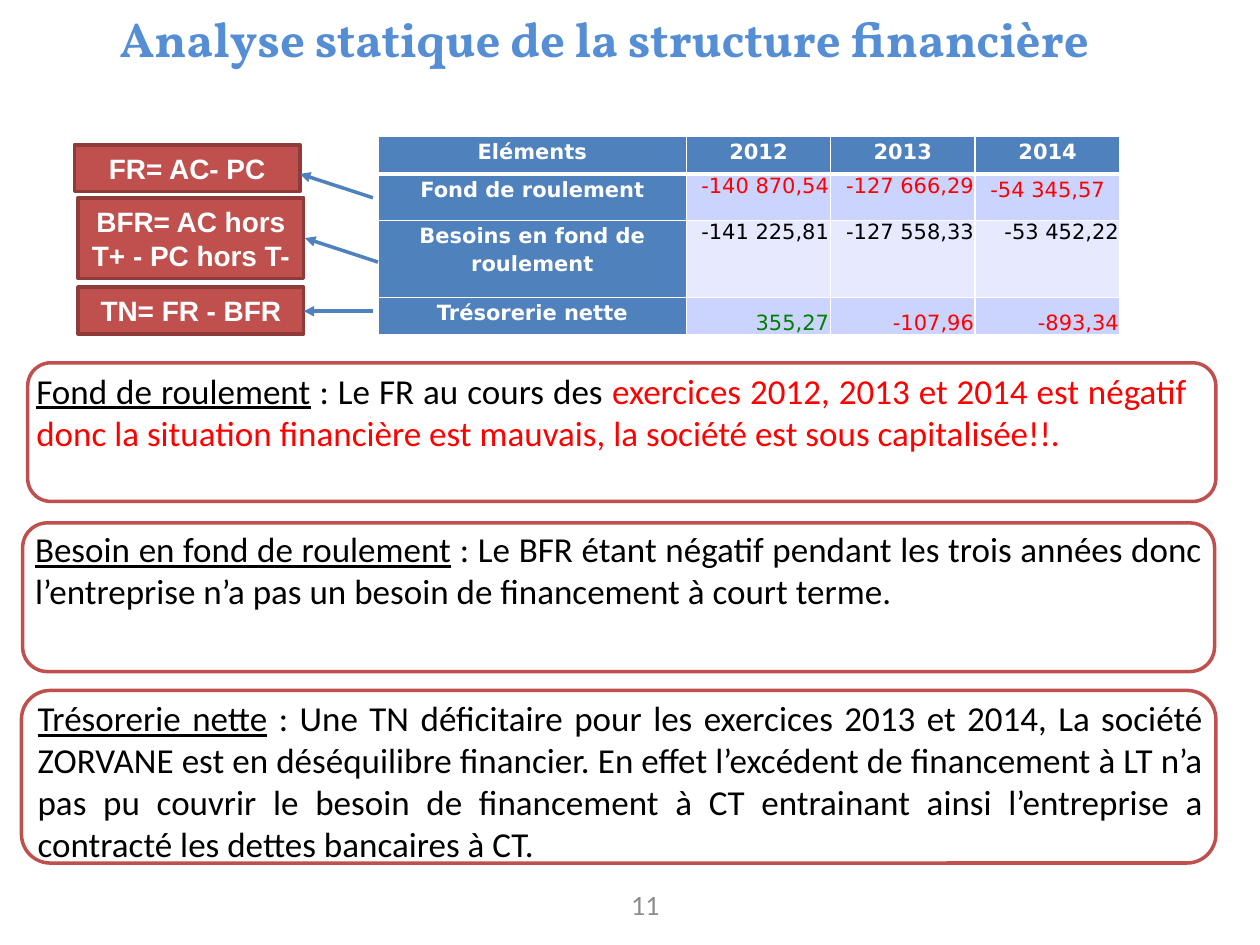
"""Builds the slide on the static analysis of the financial structure."""
from dataclasses import dataclass

from lxml import etree
from pptx import Presentation
from pptx.dml.color import RGBColor
from pptx.enum.shapes import MSO_CONNECTOR, MSO_SHAPE
from pptx.enum.text import MSO_ANCHOR, PP_ALIGN
from pptx.oxml.ns import qn
from pptx.util import Inches, Pt

RECT, ROUNDED = MSO_SHAPE.RECTANGLE, MSO_SHAPE.ROUNDED_RECTANGLE
STRAIGHT = MSO_CONNECTOR.STRAIGHT
TOP, MIDDLE, BOTTOM = MSO_ANCHOR.TOP, MSO_ANCHOR.MIDDLE, MSO_ANCHOR.BOTTOM
LEFT, CENTER, RIGHT, JUSTIFY = PP_ALIGN.LEFT, PP_ALIGN.CENTER, PP_ALIGN.RIGHT, PP_ALIGN.JUSTIFY


@dataclass(frozen=True)
class Theme:
    blue: str = "4F81BD"
    title_blue: str = "558ED5"
    red: str = "C0504D"
    dark_red: str = "8E3B39"
    alert: str = "FF0000"
    gain: str = "008000"
    band: str = "CBD3FF"
    light_band: str = "E7EAFF"
    grey: str = "8C8C8C"
    black: str = "000000"
    white: str = "FFFFFF"
    title_font: str = "Vollkorn"
    formula_font: str = "Arial"
    table_font: str = "DejaVu Sans"
    body_font: str = "Calibri"
    title_size: int = 28
    body_size: int = 20
    formula_size: int = 16
    table_size: int = 12


THEME = Theme()
Box = tuple[float, float, float, float]


@dataclass(frozen=True)
class Formula:
    text: str
    box: Box
    arrow_start: tuple[float, float]
    arrow_end: tuple[float, float]


@dataclass(frozen=True)
class Comment:
    term: str
    text: str
    frame: Box
    text_box: Box
    warning: str = ""


@dataclass(frozen=True)
class Row:
    label: str
    values: tuple[str, str, str]
    height: float
    fill: str
    colors: tuple[str, str, str]
    anchor: MSO_ANCHOR = TOP


FORMULAS = (
    Formula("FR= AC- PC", (0.59, 1.15, 1.79, 0.37), (2.96, 1.57), (2.38, 1.38)),
    Formula("BFR= AC hors T+ - PC hors T-", (0.62, 1.57, 1.79, 0.64), (3, 2.08), (2.42, 1.89)),
    Formula("TN= FR - BFR", (0.62, 2.28, 1.79, 0.37), (2.96, 2.47), (2.41, 2.47)),
)
COMMENTS = (
    Comment("Fond de roulement", " : Le FR au cours des ",
            (0.22, 2.88, 9.43, 1.1), (0.19, 2.88, 9.33, 0.99),
            "exercices 2012, 2013 et 2014 est négatif donc la situation financière est mauvais, "
            "la société est sous capitalisée!!."),
    Comment("Besoin en fond de roulement",
            " : Le BFR étant négatif pendant les trois années donc l’entreprise n’a pas un besoin "
            "de financement à court terme.",
            (0.18, 4.15, 9.46, 1.18), (0.18, 4.14, 9.46, 0.99)),
    Comment("Trésorerie nette",
            " : Une TN déficitaire pour les exercices 2013 et 2014, La société ZORVANE est en "
            "déséquilibre financier. En effet l’excédent de financement à LT n’a pas pu couvrir le "
            "besoin de financement à CT entrainant ainsi l’entreprise a contracté les dettes "
            "bancaires à CT.",
            (0.17, 5.48, 9.48, 1.37), (0.2, 5.48, 9.45, 0.99)),
)
HEADINGS = ("Eléments", "2012", "2013", "2014")
COLUMN_WIDTHS = (2.45, 1.14, 1.15, 1.15)
HEADER_HEIGHT = 0.3
ROWS = (
    Row("Fond de roulement", ("-140 870,54", "-127 666,29", "-54 345,57"), 0.37,
        THEME.band, (THEME.alert,) * 3),
    Row("Besoins en fond de roulement", ("-141 225,81", "-127 558,33", "-53 452,22"), 0.61,
        THEME.light_band, (THEME.black,) * 3),
    Row("Trésorerie nette", ("355,27", "-107,96", "-893,34"), 0.3,
        THEME.band, (THEME.gain, THEME.alert, THEME.alert), BOTTOM),
)


def add_run(paragraph, text: str, color: str, **formats) -> None:
    run = paragraph.add_run()
    run.text = text
    for attribute, value in formats.items():
        setattr(run.font, attribute, value)
    run.font.color.rgb = RGBColor.from_string(color)


def add_text_box(slide, box: Box, align: PP_ALIGN, anchor: MSO_ANCHOR = TOP):
    frame = slide.shapes.add_textbox(*map(Inches, box)).text_frame
    frame.word_wrap = True
    frame.vertical_anchor = anchor
    frame.paragraphs[0].alignment = align
    return frame


def add_panel(slide, kind: MSO_SHAPE, box: Box, fill: str, line: str):
    panel = slide.shapes.add_shape(kind, *map(Inches, box))
    panel.shadow.inherit = False
    panel.fill.solid()
    panel.fill.fore_color.rgb = RGBColor.from_string(fill)
    panel.line.color.rgb = RGBColor.from_string(line)
    panel.line.width = Pt(2)
    return panel


def add_formula(slide, formula: Formula) -> None:
    frame = add_panel(slide, RECT, formula.box, THEME.red, THEME.dark_red).text_frame
    frame.word_wrap = True
    frame.vertical_anchor = MIDDLE
    paragraph = frame.paragraphs[0]
    paragraph.alignment = CENTER
    add_run(paragraph, formula.text, THEME.white, name=THEME.formula_font,
            size=Pt(THEME.formula_size), bold=True)
    arrow = slide.shapes.add_connector(
        STRAIGHT, *map(Inches, formula.arrow_start + formula.arrow_end))
    arrow.line.color.rgb = RGBColor.from_string(THEME.blue)
    arrow.line.width = Pt(2)
    properties = arrow._element.spPr
    etree.SubElement(properties.find(qn("a:ln")), qn("a:tailEnd"), type="triangle")
    etree.SubElement(properties, qn("a:effectLst"))


def add_comment(slide, comment: Comment) -> None:
    add_panel(slide, ROUNDED, comment.frame, THEME.white, THEME.red)
    paragraph = add_text_box(slide, comment.text_box, JUSTIFY).paragraphs[0]
    formats = {"name": THEME.body_font, "size": Pt(THEME.body_size)}
    add_run(paragraph, comment.term, THEME.black, underline=True, **formats)
    add_run(paragraph, comment.text, THEME.black, **formats)
    if comment.warning:
        add_run(paragraph, comment.warning, THEME.alert, **formats)


def set_borders(cell, top: int, bottom: int) -> None:
    properties = cell._tc.get_or_add_tcPr()
    for index, (side, width) in enumerate(zip("LRTB", (1, 1, top, bottom))):
        border = etree.Element(qn(f"a:ln{side}"), w=str(Pt(width)))
        fill = etree.SubElement(border, qn("a:solidFill"))
        etree.SubElement(fill, qn("a:srgbClr"), val=THEME.white)
        properties.insert(index, border)


def fill_cell(cell, text: str, fill: str, color: str, align: PP_ALIGN = CENTER,
              anchor: MSO_ANCHOR = TOP, bold: bool = False) -> None:
    cell.fill.solid()
    cell.fill.fore_color.rgb = RGBColor.from_string(fill)
    side = Inches(0.07 if align == CENTER else 0.01)
    layout = {"margin_left": side, "margin_right": side, "margin_top": 0,
              "margin_bottom": 0, "vertical_anchor": anchor}
    for attribute, value in layout.items():
        setattr(cell, attribute, value)
    paragraph = cell.text_frame.paragraphs[0]
    paragraph.alignment = align
    if align == CENTER:
        paragraph.line_spacing = 1.15
    add_run(paragraph, text, color, name=THEME.table_font, size=Pt(THEME.table_size), bold=bold)


def add_results(slide) -> None:
    heights = (HEADER_HEIGHT, *(row.height for row in ROWS))
    box = (3, 1.08, sum(COLUMN_WIDTHS), sum(heights))
    table = slide.shapes.add_table(len(heights), len(HEADINGS), *map(Inches, box)).table
    for column, width in zip(table.columns, COLUMN_WIDTHS):
        column.width = Inches(width)
    for table_row, height in zip(table.rows, heights):
        table_row.height = Inches(height)
    for column, heading in enumerate(HEADINGS):
        fill_cell(table.cell(0, column), heading, THEME.blue, THEME.white, bold=True)
    for index, row in enumerate(ROWS, 1):
        fill_cell(table.cell(index, 0), row.label, THEME.blue, THEME.white, bold=True)
        for column, (value, color) in enumerate(zip(row.values, row.colors), 1):
            align = CENTER if (index, column) == (1, 3) else RIGHT
            fill_cell(table.cell(index, column), value, row.fill, color, align, row.anchor)
    for index in range(len(heights)):
        for cell in table.rows[index].cells:
            set_borders(cell, 3 if index == 1 else 1, 3 if index == 0 else 1)


def main() -> None:
    deck = Presentation()
    deck.slide_width, deck.slide_height = Inches(10), Inches(7.5)
    slide = deck.slides.add_slide(deck.slide_layouts[6])
    add_results(slide)
    for formula in FORMULAS:
        add_formula(slide, formula)
    title = add_text_box(slide, (0.35, 0.02, 8.89, 0.62), CENTER)
    add_run(title.paragraphs[0], "Analyse statique de la structure financière", THEME.title_blue,
            name=THEME.title_font, size=Pt(THEME.title_size), bold=True)
    page = add_text_box(slide, (3.59, 7, 3.17, 0.35), LEFT, MIDDLE)
    page.margin_left = Inches(1.42)
    add_run(page.paragraphs[0], "11", THEME.grey, name=THEME.body_font,
            size=Pt(THEME.formula_size))
    for comment in COMMENTS:
        add_comment(slide, comment)
    deck.save("out.pptx")


if __name__ == "__main__":
    main()
